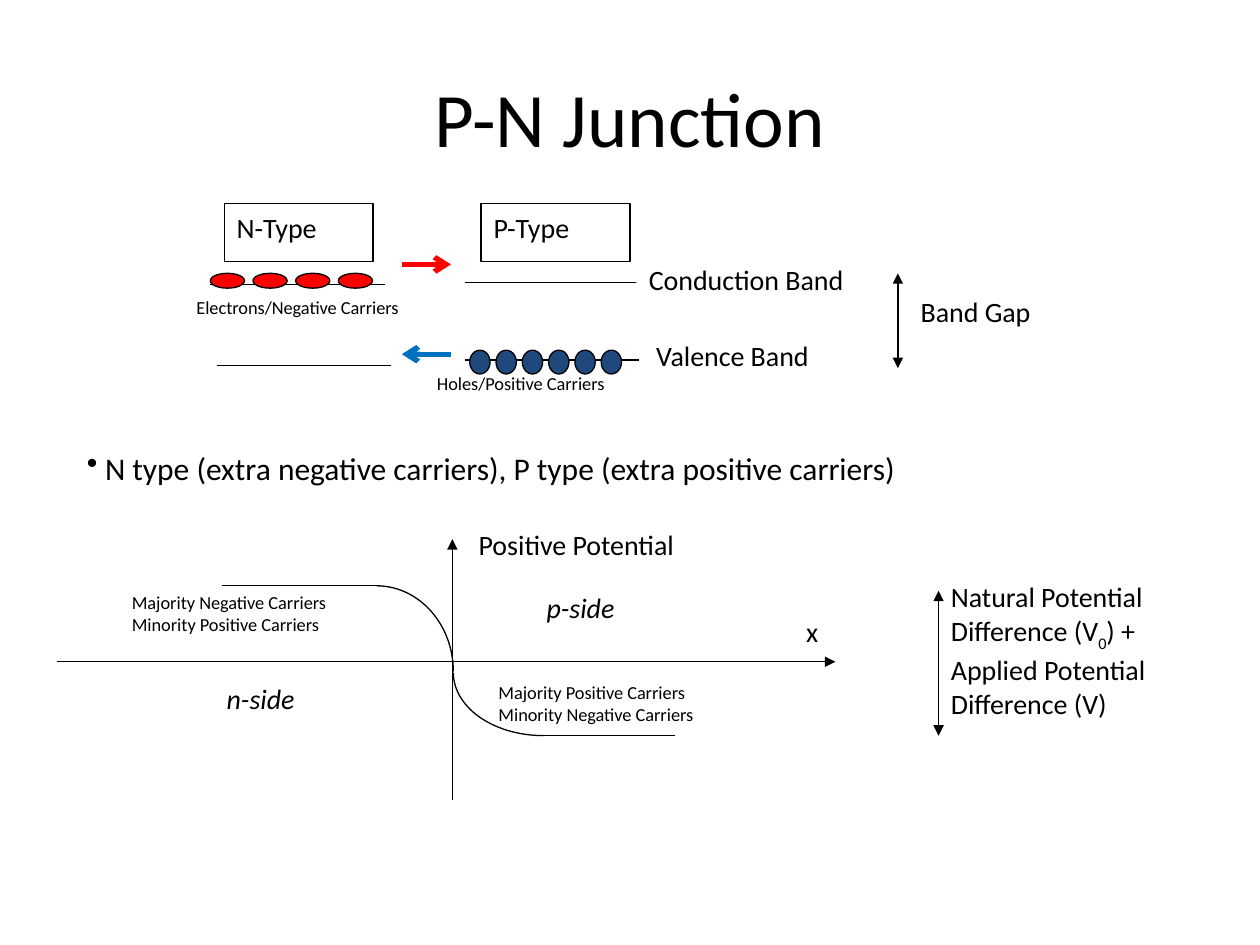
from dataclasses import dataclass
from math import cos, radians, sin

from lxml.etree import SubElement
from pptx import Presentation
from pptx.dml.color import RGBColor
from pptx.enum.shapes import MSO_CONNECTOR as Connector, MSO_SHAPE as Shape
from pptx.enum.text import MSO_ANCHOR as Anchor, PP_ALIGN as Align
from pptx.oxml.ns import qn
from pptx.util import Cm, Pt


@dataclass(frozen=True)
class Theme:
    font: str = "Calibri"
    ink: str = "000000"
    paper: str = "FFFFFF"
    electron: str = "FF0000"
    hole: str = "1F497D"
    hole_flow: str = "0070C0"
    title: float = 44
    bullet: float = 18
    label: float = 16
    note: float = 10.5
    thin: float = 0.75
    thick: float = 3


def write(frame, text, *, theme, size, italic=False, align=Align.LEFT,
          anchor=Anchor.TOP, bullet=None):
    """Fill a text frame; text is a string or a list of (string, baseline %) parts."""
    frame.word_wrap = True
    frame.vertical_anchor = anchor
    paragraph = frame.paragraphs[0]
    paragraph.alignment = align
    if bullet:
        SubElement(paragraph._p.get_or_add_pPr(), qn("a:buChar"), char=bullet)
    parts = [(text, 0)] if isinstance(text, str) else text
    for part, baseline in parts:
        for number, line in enumerate(part.split("\n")):
            if number:
                paragraph.add_line_break()
            run = paragraph.add_run()
            run.text = line
            run.font.name = theme.font
            run.font.size = Pt(size)
            run.font.italic = italic
            run.font.color.rgb = RGBColor.from_string(theme.ink)
            if baseline:
                run._r.get_or_add_rPr().set("baseline", str(baseline * 1000))


class Diagram:
    """Draws on one slide in one theme; all lengths are in centimetres."""

    def __init__(self, slide, theme):
        self.shapes = slide.shapes
        self.theme = theme

    def _outline(self, line, color=None, width=None):
        line.color.rgb = RGBColor.from_string(color or self.theme.ink)
        line.width = Pt(width or self.theme.thin)

    def _preset(self, kind, place, fill, outlined):
        shape = self.shapes.add_shape(kind, *map(Cm, place))
        shape.shadow.inherit = False
        shape.fill.solid()
        shape.fill.fore_color.rgb = RGBColor.from_string(fill)
        if outlined:
            self._outline(shape.line)
        else:
            shape.line.fill.background()
        return shape

    def text(self, text, *place, size, **style):
        box = self.shapes.add_textbox(*map(Cm, place))
        write(box.text_frame, text, theme=self.theme, size=size, **style)

    def label(self, text, *place, size=None, outlined=False, **style):
        box = self._preset(Shape.RECTANGLE, place, self.theme.paper, outlined)
        write(box.text_frame, text, theme=self.theme,
              size=size or self.theme.label, **style)

    def carriers(self, count, left, top, width, height, pitch, color):
        for number in range(count):
            place = (left + number * pitch, top, width, height)
            self._preset(Shape.OVAL, place, color, True)

    def line(self, *ends, head=None, tail=None, color=None, width=None):
        line = self.shapes.add_connector(Connector.STRAIGHT, *map(Cm, ends))
        self._outline(line.line, color, width)
        ln = line.line._get_or_add_ln()
        for end, arrow in (("a:headEnd", head), ("a:tailEnd", tail)):
            if arrow:
                SubElement(ln, qn(end), type=arrow)
        SubElement(line._element.spPr, qn("a:effectLst"))

    def quarter_curve(self, center_x, center_y, radius_x, radius_y, start):
        """Trace 90 degrees of an ellipse, clockwise from the start angle."""
        points = [(Cm(center_x + radius_x * cos(radians(angle))),
                   Cm(center_y + radius_y * sin(radians(angle))))
                  for angle in range(start, start + 91, 3)]
        builder = self.shapes.build_freeform(*points[0])
        builder.add_line_segments(points[1:], close=False)
        curve = builder.convert_to_shape()
        curve.shadow.inherit = False
        curve.fill.background()
        self._outline(curve.line)


def draw_bands(diagram, theme):
    diagram.label("Electrons/Negative Carriers", 3.71, 5.84, 5.28, 1.17, size=theme.note)
    diagram.label("Holes/Positive Carriers", 8.56, 7.37, 5.28, 1.17, size=theme.note)
    for left, level in ((4.24, 5.74), (9.37, 5.69), (9.37, 7.26), (4.37, 7.37)):
        diagram.line(left, level, left + 3.52, level)
    for name, left in (("N-Type", 4.52), ("P-Type", 9.7)):
        diagram.label(name, left, 4.11, 3, 1.17, outlined=True)
    diagram.carriers(4, 4.24, 5.51, 0.69, 0.3, 0.86, theme.electron)
    diagram.carriers(6, 9.47, 7.06, 0.41, 0.48, 0.53, theme.hole)
    diagram.label("Conduction Band", 12.83, 5.16, 5.41, 1.17)
    diagram.label("Valence Band", 12.98, 6.71, 5.41, 1.17)
    diagram.line(18.1, 5.51, 18.1, 7.42, head="triangle", tail="triangle")
    diagram.label("Band Gap", 18.31, 5.82, 3, 1.55)


def draw_potential(diagram, theme):
    diagram.label("x", 16, 12.27, 1.47, 1.12)
    diagram.line(1.14, 13.34, 16.84, 13.34, tail="triangle")
    diagram.label("Majority Negative Carriers\nMinority Positive Carriers",
                  2.41, 11.79, 5.94, 1.5, size=theme.note)
    diagram.label("Majority Positive Carriers\nMinority Negative Carriers",
                  9.8, 13.61, 5.94, 2.31, size=theme.note)
    diagram.line(4.47, 11.81, 7.59, 11.81)
    diagram.quarter_curve(7.59, 13.54, 1.55, 1.73, start=270)
    diagram.quarter_curve(10.95, 13.56, 1.81, 1.27, start=90)
    diagram.line(10.95, 14.83, 13.61, 14.83)
    diagram.line(9.12, 16.13, 9.12, 10.87, tail="triangle")
    diagram.label("Positive Potential", 9.4, 10.52, 5.84, 1.12)
    diagram.label([("Natural Potential Difference (V", 0), ("0", -30),
                   (") + Applied Potential Difference (V)", 0)],
                  18.92, 11.56, 4.98, 3.53)
    diagram.line(18.92, 11.91, 18.92, 14.83, head="triangle", tail="triangle")
    diagram.label("n-side", 4.32, 13.61, 4.17, 1.12, italic=True)
    diagram.label("p-side", 10.77, 11.79, 4.17, 1.12, italic=True)


def draw_carrier_flow(diagram, theme):
    diagram.line(8.1, 5.33, 9.09, 5.33, tail="arrow",
                 color=theme.electron, width=theme.thick)
    diagram.line(9.09, 7.14, 8.1, 7.14, tail="arrow",
                 color=theme.hole_flow, width=theme.thick)


def main():
    deck = Presentation()
    deck.slide_width, deck.slide_height = Cm(25.4), Cm(19.05)
    theme = Theme()
    diagram = Diagram(deck.slides.add_slide(deck.slide_layouts[6]), theme)
    diagram.text("P-N Junction", 1.27, 0.76, 22.86, 3.18, size=theme.title,
                 align=Align.CENTER, anchor=Anchor.MIDDLE)
    draw_bands(diagram, theme)
    draw_potential(diagram, theme)
    diagram.text(" N type (extra negative carriers), P type (extra positive carriers)",
                 1.5, 8.92, 21.01, 1.02, size=theme.bullet, bullet="•")
    draw_carrier_flow(diagram, theme)
    deck.save("out.pptx")


if __name__ == "__main__":
    main()
